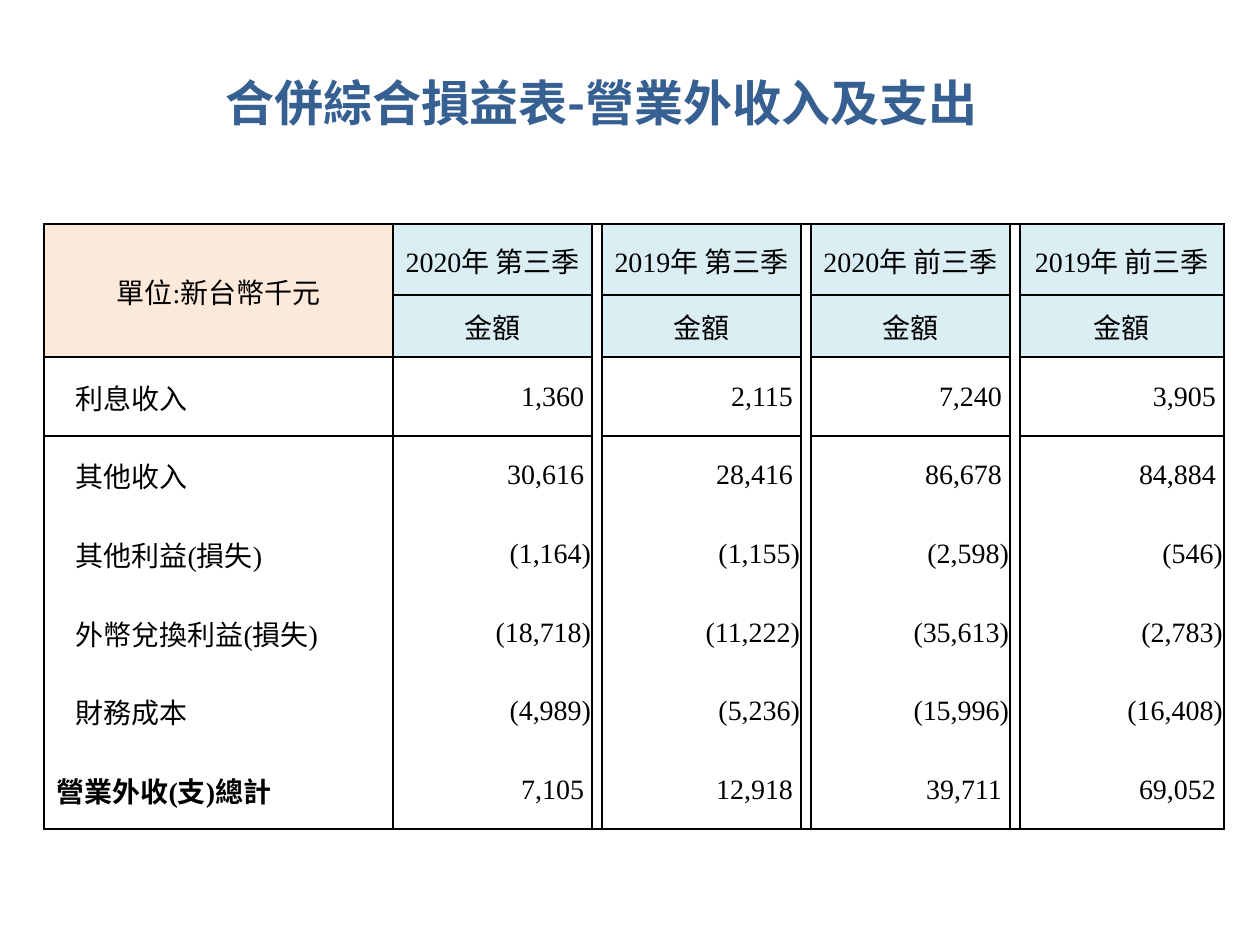
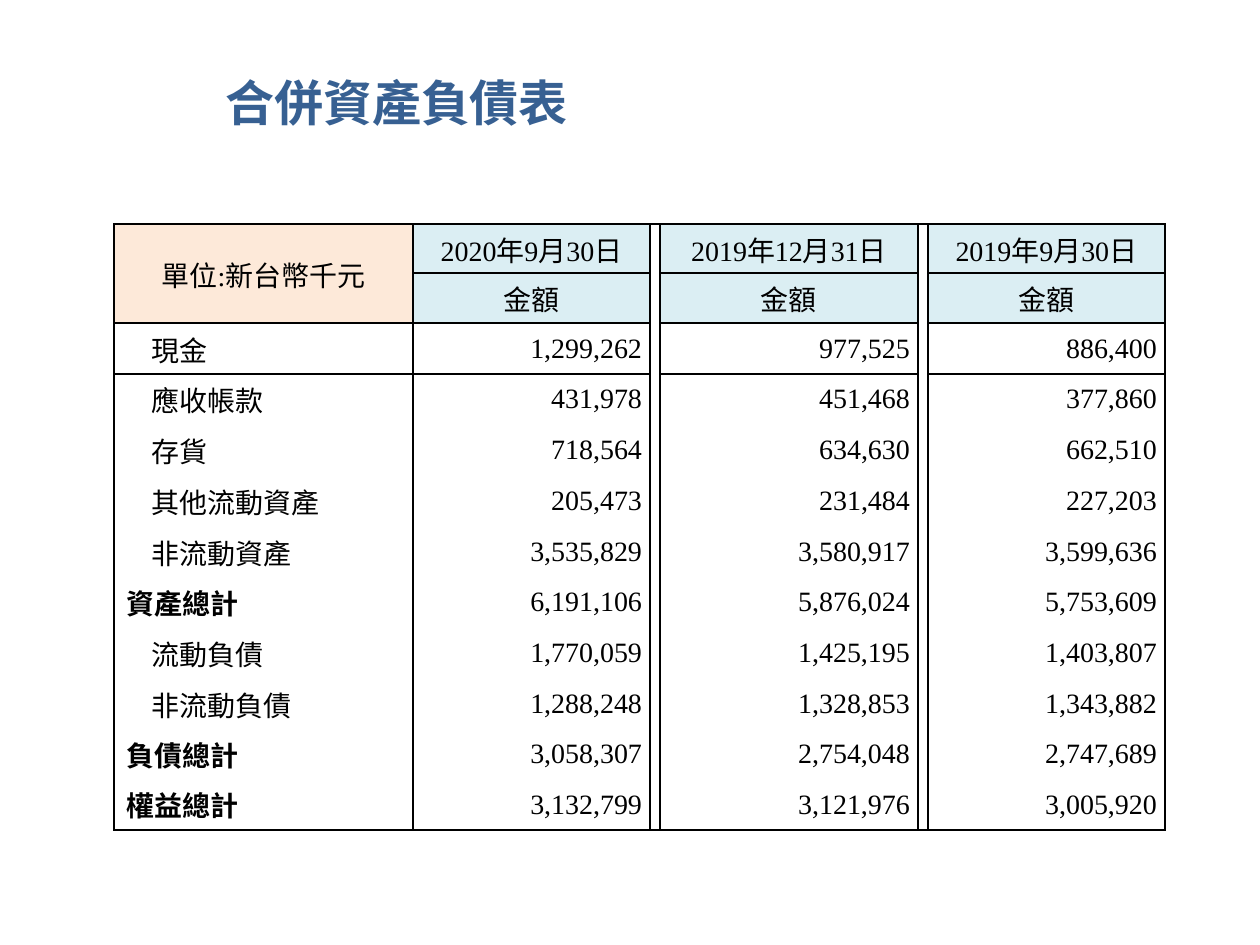
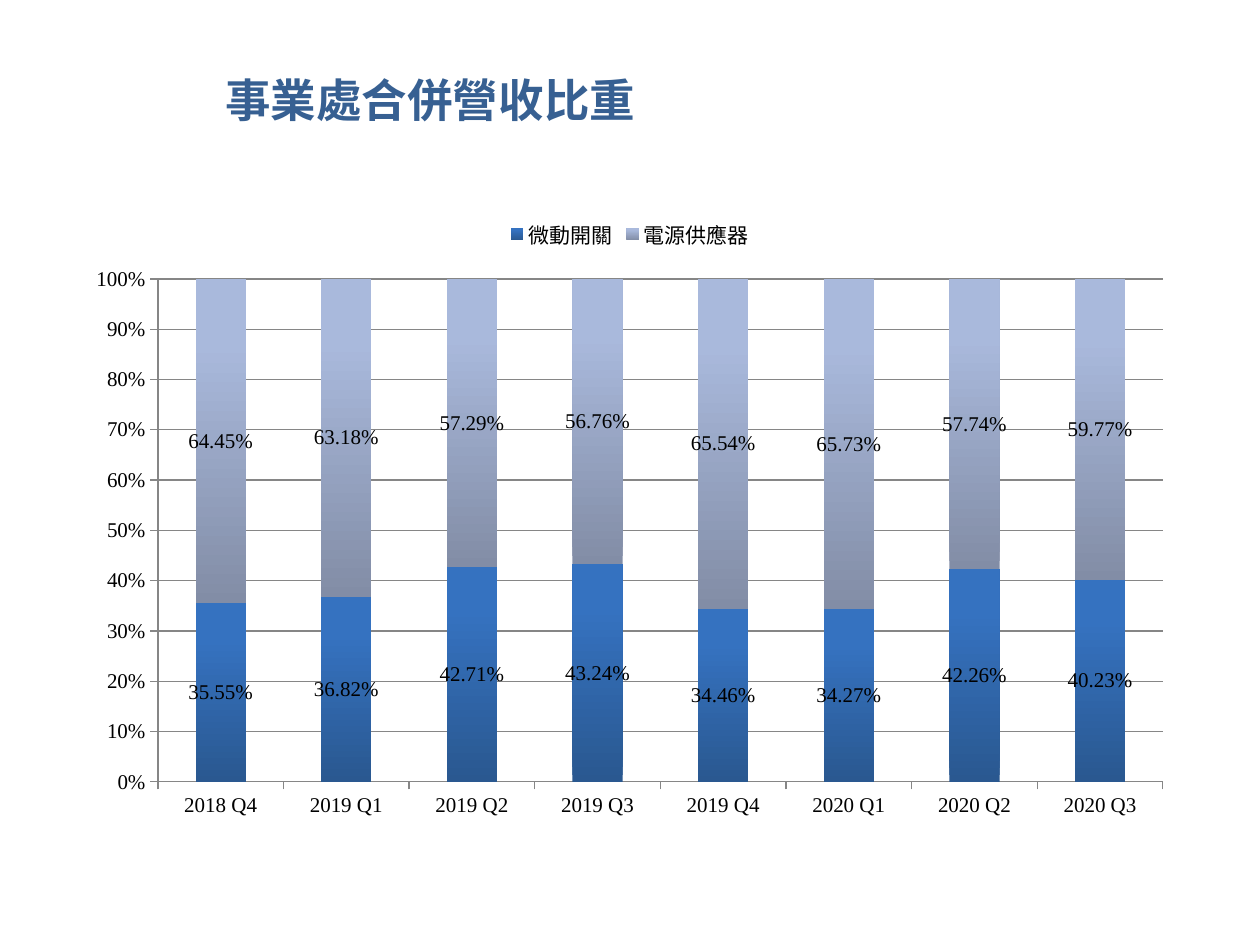
import pptx
import pptx.chart.data
import pptx.dml.color
import pptx.enum.chart
import pptx.enum.text
import pptx.oxml
import pptx.oxml.ns
import pptx.util

EMU_PER_PX = 914400 / 126
SERIF = "Times New Roman"
SANS = "Noto Sans CJK SC"
TITLE_BLUE = "376092"
BLACK = "000000"
AXIS_GREY = "868686"
UNIT_FILL = "FDE9D9"
HEADING_FILL = "DBEEF3"
NO_STYLE_NO_GRID = "{2D5ABB26-0587-4C30-8999-92F81FD0307C}"
GAP_WIDTH = 10
TABLE_TOP = 224


def px(length):
    return pptx.util.Emu(round(length * EMU_PER_PX))


def color(hex_code):
    return pptx.dml.color.RGBColor.from_string(hex_code)


def even_parts(total, count):
    """Split a length into whole parts whose edges stay evenly spaced."""
    edges = [round(total * index / count) for index in range(count + 1)]
    return [end - start for start, end in zip(edges, edges[1:])]


class Deck:
    """Shared style and the slide being built."""

    def __init__(self):
        self.presentation = pptx.Presentation()
        self.presentation.slide_width = px(1260)
        self.presentation.slide_height = px(945)
        self.slide = None

    def add_slide(self, title, width, height, size=28, font=SERIF):
        self.slide = self.presentation.slides.add_slide(self.presentation.slide_layouts[6])
        box = self.slide.shapes.add_textbox(px(213), px(66), px(width), px(height))
        box.text_frame.word_wrap = True
        self.add_run(box.text_frame.paragraphs[0], title, size, TITLE_BLUE, True, font)

    def add_run(self, paragraph, text, size=16, hex_code=BLACK, bold=False, font=SERIF):
        run = paragraph.add_run()
        run.text = text
        self.style_font(run.font, size, hex_code, font)
        run.font.bold = bold
        east_asian = pptx.oxml.parse_xml(
            f'<a:ea {pptx.oxml.ns.nsdecls("a")} typeface="{SANS}"/>')
        run.font._element.append(east_asian)

    def style_font(self, font, size, hex_code=BLACK, name=SERIF):
        font.size = pptx.util.Pt(size)
        font.color.rgb = color(hex_code)
        font.name = name

    def add_borders(self, cell, sides):
        for side in sides:
            cell._tc.get_or_add_tcPr().append(pptx.oxml.parse_xml(
                f'<a:ln{side} {pptx.oxml.ns.nsdecls("a")} w="12700"><a:solidFill>'
                f'<a:srgbClr val="{BLACK}"/></a:solidFill></a:ln{side}>'))

    def fill_cell(self, cell, text, align="CENTER", fill=None, bold=False, left=1, right=1):
        cell.margin_left, cell.margin_right = px(left), px(right)
        cell.margin_top, cell.margin_bottom = px(1), 0
        cell.vertical_anchor = pptx.enum.text.MSO_ANCHOR.MIDDLE
        if fill:
            cell.fill.solid()
            cell.fill.fore_color.rgb = color(fill)
        else:
            cell.fill.background()
        if text:
            paragraph = cell.text_frame.paragraphs[0]
            paragraph.alignment = getattr(pptx.enum.text.PP_ALIGN, align)
            self.add_run(paragraph, text, bold=bold)

    def add_statement(self, left, label_width, periods, heading_heights, body_height,
                      items, indent):
        """Add a statement table; periods pairs each heading with its column width."""
        widths = [label_width]
        for index, (_, width) in enumerate(periods):
            widths += [GAP_WIDTH, width] if index else [width]
        heights = [*heading_heights, *even_parts(body_height, len(items))]
        frame = self.slide.shapes.add_table(
            len(heights), len(widths), px(left), px(TABLE_TOP),
            px(sum(widths)), px(sum(heights)))
        table = frame.table
        table.first_row = table.horz_banding = False
        table._tbl.tblPr[0].text = NO_STYLE_NO_GRID
        for column, width in zip(table.columns, widths):
            column.width = px(width)
        for row, height in zip(table.rows, heights):
            row.height = px(height)

        last_row = len(heights) - 1
        for row in range(len(heights)):
            for column in range(len(widths)):
                is_gap = column > 0 and column % 2 == 0
                top = row == 0 or (row <= 2 and not is_gap)
                bottom = row == last_row or (row <= 1 and not is_gap)
                sides = "LR" + "T" * top + "B" * bottom
                self.add_borders(table.cell(row, column), sides)
                if is_gap:
                    self.fill_cell(table.cell(row, column), "")

        table.cell(0, 0).merge(table.cell(1, 0))
        self.fill_cell(table.cell(0, 0), "單位:新台幣千元", fill=UNIT_FILL)
        for index, (period, _) in enumerate(periods):
            for row, text in enumerate((period, "金額")):
                self.fill_cell(table.cell(row, 2 * index + 1), text, fill=HEADING_FILL)
        for row, (label, *amounts) in enumerate(items, start=2):
            is_total = label.endswith("總計")
            self.fill_cell(table.cell(row, 0), label, "LEFT", bold=is_total,
                           left=13 if is_total else indent)
            for index, amount in enumerate(amounts):
                self.fill_cell(table.cell(row, 2 * index + 1), amount, "RIGHT",
                               right=1 if amount.endswith(")") else 8)

    def add_share_chart(self, frame, plot_frame, quarters, shares):
        """Add stacked columns; shares maps a name to values and dark and light colours."""
        data = pptx.chart.data.CategoryChartData()
        data.categories = quarters
        for name, (values, _, _) in shares.items():
            data.add_series(name, values, number_format="0.00%")
        chart = self.slide.shapes.add_chart(
            pptx.enum.chart.XL_CHART_TYPE.COLUMN_STACKED, *map(px, frame), data).chart
        self.style_font(chart.font, 10, name="Calibri")
        chart.has_title = False
        chart.has_legend = True
        chart.legend.position = pptx.enum.chart.XL_LEGEND_POSITION.TOP
        chart.legend.include_in_layout = False
        self.style_font(chart.legend.font, 12)

        for axis in (chart.category_axis, chart.value_axis):
            self.style_font(axis.tick_labels.font, 12)
            axis.format.line.color.rgb = color(AXIS_GREY)
            axis.major_tick_mark = pptx.enum.chart.XL_TICK_MARK.OUTSIDE
        axis = chart.value_axis
        axis.minimum_scale, axis.maximum_scale, axis.major_unit = 0, 1, 0.1
        axis.major_gridlines.format.line.color.rgb = color(AXIS_GREY)
        axis.tick_labels.number_format = "0%"
        axis.tick_labels.number_format_is_linked = False

        plot = chart.plots[0]
        plot.gap_width, plot.overlap = 150, 100
        plot.vary_by_categories = False
        for series, (_, dark, light) in zip(plot.series, shares.values()):
            fill = series.format.fill
            fill.gradient()
            fill.gradient_angle = 90
            for stop, hex_code, position in zip(fill.gradient_stops, (dark, light), (0, 0.8)):
                stop.color.rgb = color(hex_code)
                stop.position = position
            labels = series.data_labels
            labels.show_value = True
            labels.number_format = "0.00%"
            labels.number_format_is_linked = False
            self.style_font(labels.font, 12)
        self.place_plot(chart, frame, plot_frame)

    def place_plot(self, chart, frame, plot_frame):
        left, top, width, height = frame
        plot_left, plot_top, plot_width, plot_height = plot_frame
        fractions = {"x": (plot_left - left) / width, "y": (plot_top - top) / height,
                     "w": plot_width / width, "h": plot_height / height}
        values = "".join(f'<c:{key} val="{value:.4f}"/>' for key, value in fractions.items())
        plot_area = chart._chartSpace.chart.plotArea
        for layout in plot_area.findall(pptx.oxml.ns.qn("c:layout")):
            plot_area.remove(layout)
        plot_area.insert(0, pptx.oxml.parse_xml(
            f'<c:layout {pptx.oxml.ns.nsdecls("c")}><c:manualLayout>'
            '<c:layoutTarget val="inner"/><c:xMode val="edge"/><c:yMode val="edge"/>'
            f'{values}</c:manualLayout></c:layout>'))


def main():
    deck = Deck()

    deck.add_slide("合併綜合損益表-營業外收入及支出", 1022, 72, font=SANS)
    deck.add_statement(
        44, 349,
        [("2020年 第三季", 199), ("2019年 第三季", 199),
         ("2020年 前三季", 199), ("2019年 前三季", 204)],
        (71, 62), 472,
        [("利息收入", "1,360", "2,115", "7,240", "3,905"),
         ("其他收入", "30,616", "28,416", "86,678", "84,884"),
         ("其他利益(損失)", "(1,164)", "(1,155)", "(2,598)", "(546)"),
         ("外幣兌換利益(損失)", "(18,718)", "(11,222)", "(35,613)", "(2,783)"),
         ("財務成本", "(4,989)", "(5,236)", "(15,996)", "(16,408)"),
         ("營業外收(支)總計", "7,105", "12,918", "39,711", "69,052")],
        indent=32)

    deck.add_slide("合併資產負債表", 843, 115)
    deck.add_statement(
        114, 299,
        [("2020年9月30日", 237), ("2019年12月31日", 258), ("2019年9月30日", 237)],
        (49, 50), 507,
        [("現金", "1,299,262", "977,525", "886,400"),
         ("應收帳款", "431,978", "451,468", "377,860"),
         ("存貨", "718,564", "634,630", "662,510"),
         ("其他流動資產", "205,473", "231,484", "227,203"),
         ("非流動資產", "3,535,829", "3,580,917", "3,599,636"),
         ("資產總計", "6,191,106", "5,876,024", "5,753,609"),
         ("流動負債", "1,770,059", "1,425,195", "1,403,807"),
         ("非流動負債", "1,288,248", "1,328,853", "1,343,882"),
         ("負債總計", "3,058,307", "2,754,048", "2,747,689"),
         ("權益總計", "3,132,799", "3,121,976", "3,005,920")],
        indent=38)

    deck.add_slide("事業處合併營收比重", 953, 68, size=26)
    deck.add_share_chart(
        (74, 204, 1112, 625), (158, 279, 1005, 503),
        ["2018 Q4", "2019 Q1", "2019 Q2", "2019 Q3",
         "2019 Q4", "2020 Q1", "2020 Q2", "2020 Q3"],
        {"微動開關": ((0.3555, 0.3682, 0.4271, 0.4324, 0.3446, 0.3427, 0.4226, 0.4023),
                  "2A5890", "3572C0"),
         "電源供應器": ((0.6445, 0.6318, 0.5729, 0.5676, 0.6554, 0.6573, 0.5774, 0.5977),
                   "828DA6", "A9B9DC")})

    deck.presentation.save("out.pptx")


if __name__ == "__main__":
    main()
